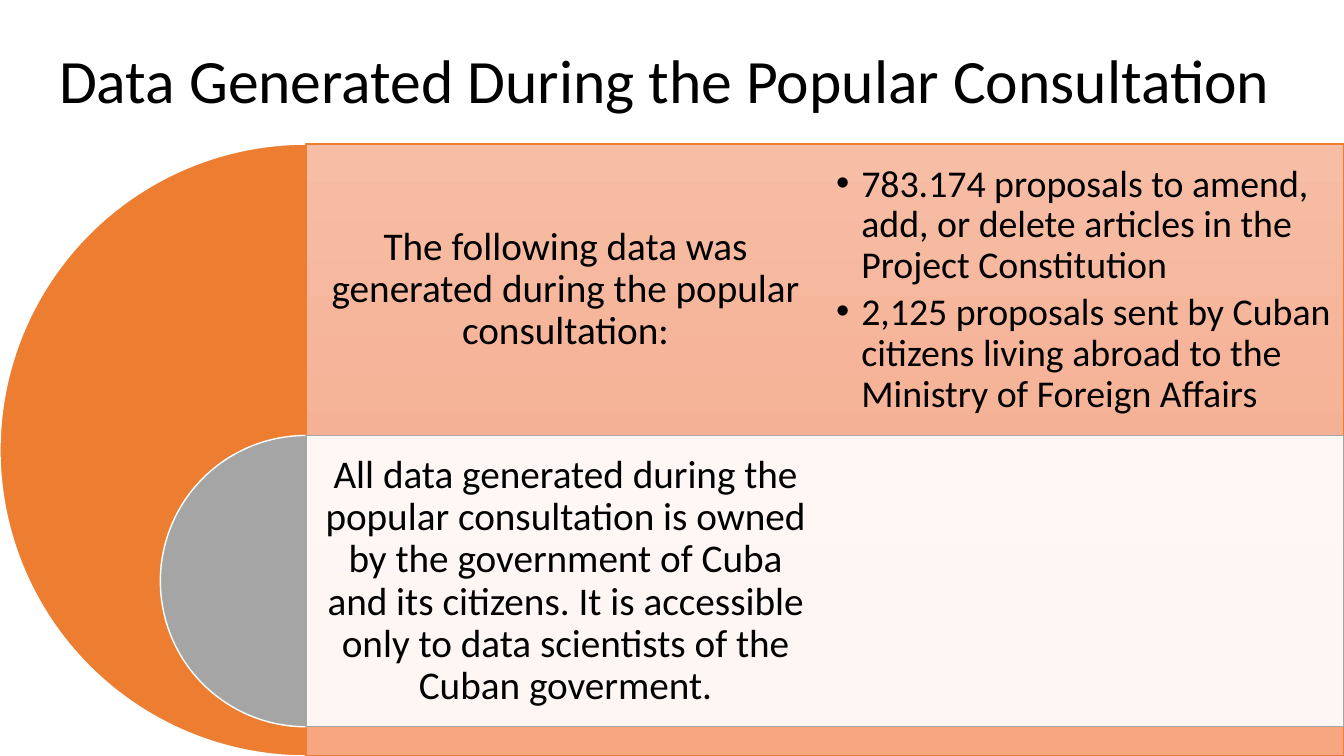
from copy import deepcopy
from lxml import etree
from pptx import Presentation
from pptx.dml.color import RGBColor
from pptx.enum.shapes import MSO_SHAPE
from pptx.enum.text import MSO_ANCHOR, MSO_AUTO_SIZE, PP_ALIGN
from pptx.oxml.ns import qn
from pptx.util import Inches, Pt

PIE, RECT = MSO_SHAPE.PIE, MSO_SHAPE.RECTANGLE
MIDDLE, NO_FIT = MSO_ANCHOR.MIDDLE, MSO_AUTO_SIZE.NONE
LEFT, CENTER = PP_ALIGN.LEFT, PP_ALIGN.CENTER

W, H = 13.33, 7.5
TOP = 1.43
DIAMETER = H - TOP
AXIS = DIAMETER / 2
ROW = 2.89
COL = (W - AXIS) / 2

ORANGE, GREY, WHITE, BLACK = "ED7D31", "A5A5A5", "FFFFFF", "000000"
BAND_STOPS = [(0, "F7BDA5"), (0.5, "F5B196"), (1, "F8A582")]

TITLE = "Data Generated During the Popular Consultation "
HEADINGS = [
    "The following data was generated during the popular consultation:",
    "All data generated during the popular consultation is owned by the "
    "government of Cuba and its citizens. It is accessible only to data "
    "scientists of the Cuban goverment.",
]
PROPOSALS = [
    "783.174 proposals to amend, add, or delete articles in the Project Constitution",
    "2,125 proposals sent by Cuban citizens living abroad to the Ministry of Foreign Affairs",
]


def rgb(color):
    return RGBColor.from_string(color)


def apply(target, values):
    for name, value in values.items():
        setattr(target, name, value)


def place(sp, box):
    apply(sp, dict(zip(("left", "top", "width", "height"), map(Inches, box))))


def add_bullet(p):
    pPr = p._p.get_or_add_pPr()
    pPr.set("marL", str(Inches(0.25)))
    pPr.set("indent", str(-Inches(0.25)))
    etree.SubElement(pPr, qn("a:buFont")).set("typeface", "Arial")
    etree.SubElement(pPr, qn("a:buChar")).set("char", "•")


def write(sp, lines, size, align=CENTER, inset=0.12, gap=0, bullets=False):
    tf = sp.text_frame
    apply(tf, {"word_wrap": True, "auto_size": NO_FIT, "vertical_anchor": MIDDLE})
    apply(tf, {f"margin_{side}": Inches(inset)
               for side in ("left", "top", "right", "bottom")})
    for i, line in enumerate(lines):
        p = tf.paragraphs[0] if i == 0 else tf.add_paragraph()
        apply(p, {"alignment": align, "line_spacing": 0.9,
                  "space_before": Pt(0), "space_after": Pt(gap)})
        if bullets:
            add_bullet(p)
        r = p.add_run()
        r.text = line
        apply(r.font, {"size": Pt(size), "name": "Calibri"})
        r.font.color.rgb = rgb(BLACK)


def add_shape(s, kind, box, line, fill=None):
    sp = s.shapes.add_shape(kind, *map(Inches, box))
    sp.shadow.inherit = False
    sp.line.color.rgb = rgb(line)
    sp.line.width = Pt(1)
    if fill:
        sp.fill.solid()
        sp.fill.fore_color.rgb = rgb(fill)
    return sp


def half_disc(s, center_y, diameter, fill):
    box = (AXIS - diameter / 2, center_y - diameter / 2, diameter, diameter)
    sp = add_shape(s, PIE, box, WHITE, fill)
    sp.adjustments[0], sp.adjustments[1] = 54, 162  # 90° to 270°


def fill_gradient(sp, stops):
    sp.fill.gradient()
    sp.fill.gradient_angle = 270
    gs_list = sp._element.spPr.find(".//" + qn("a:gsLst"))
    gs_list.append(deepcopy(gs_list[0]))
    for stop, (position, color) in zip(sp.fill.gradient_stops, stops):
        stop.position = position
        stop.color.rgb = rgb(color)


def set_opacity(sp, percent):
    color = sp._element.spPr.find(qn("a:solidFill"))[0]
    etree.SubElement(color, qn("a:alpha")).set("val", str(percent * 1000))


def heading(s, row, text):
    box = (AXIS, TOP + row * ROW, COL, ROW)
    write(s.shapes.add_textbox(*map(Inches, box)), [text], 28)


def outer_band(s):
    half_disc(s, TOP + DIAMETER / 2, DIAMETER, ORANGE)
    panel = add_shape(s, RECT, (AXIS, TOP, 2 * COL, DIAMETER), ORANGE)
    fill_gradient(panel, BAND_STOPS)
    heading(s, 0, HEADINGS[0])


def inner_band(s):
    half_disc(s, TOP + 1.5 * ROW, ROW, GREY)
    panel = add_shape(s, RECT, (AXIS, TOP + ROW, 2 * COL, ROW), GREY, WHITE)
    set_opacity(panel, 90)
    heading(s, 1, HEADINGS[1])


def proposal_list(s, body):
    s.shapes._spTree.append(body._element)  # bring in front of the panels
    place(body, (AXIS + COL, TOP, COL, ROW))
    write(body, PROPOSALS, 27, LEFT, inset=0.11, gap=4, bullets=True)


def main():
    prs = Presentation()
    prs.slide_width, prs.slide_height = Inches(W), Inches(H)
    s = prs.slides.add_slide(prs.slide_layouts[1])
    title, body = s.placeholders
    place(title, (0, 0.23, W, 1.2))
    write(title, [TITLE], 44, inset=0.1)
    outer_band(s)
    inner_band(s)
    proposal_list(s, body)
    prs.save("out.pptx")


if __name__ == "__main__":
    main()
